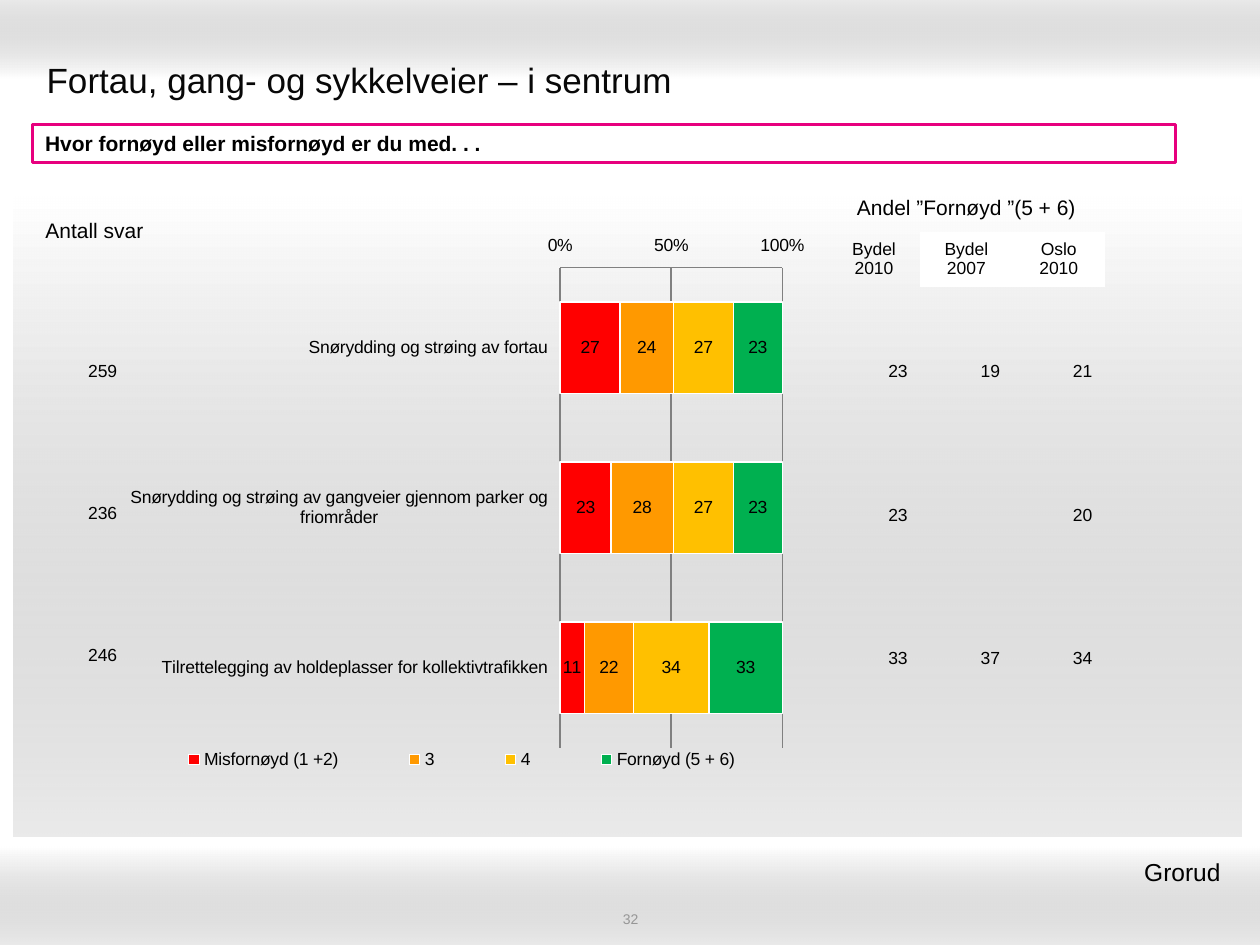
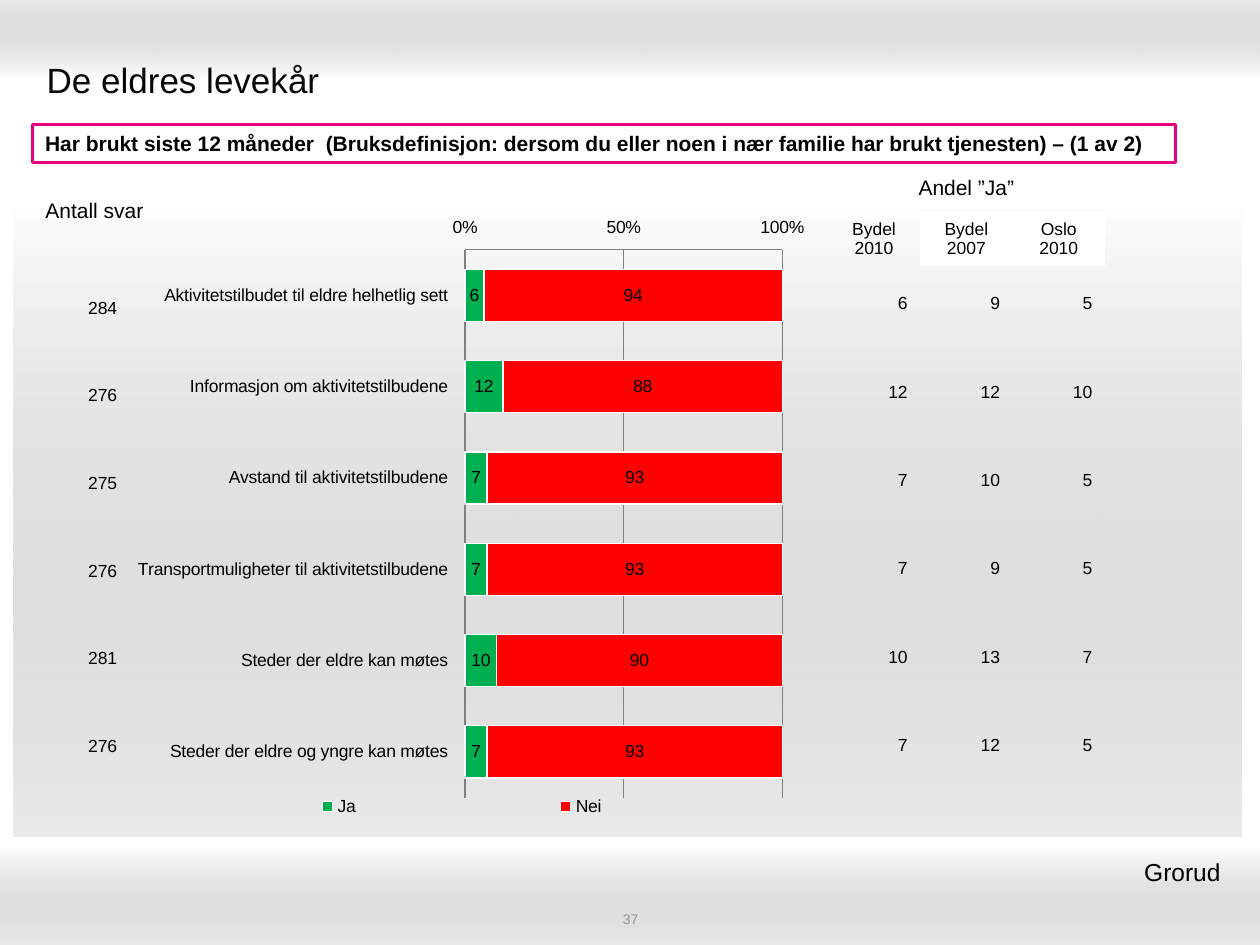
import dataclasses
import typing

import pptx
import pptx.chart.data
import pptx.dml.color
import pptx.enum.chart
import pptx.enum.shapes
import pptx.enum.text
import pptx.oxml
import pptx.oxml.ns
import pptx.util

FONT = "Arial"
INK, WHITE, GREY, PINK, RULE = "000000", "FFFFFF", "999999", "E7007E", "808080"
RED, ORANGE, YELLOW, GREEN = "FF0000", "FF9900", "FFC000", "00B050"
PLAIN_STYLE = "{2D5ABB26-0587-4C30-8999-92F81FD0307C}"
WIDE, HIGH = pptx.util.Inches(10), pptx.util.Inches(7.5)

Align = pptx.enum.text.PP_ALIGN
Anchor = pptx.enum.text.MSO_ANCHOR
Rows = list[list[str]]
qn = pptx.oxml.ns.qn


@dataclasses.dataclass
class Box:
    """A place in percent of the slide's width and height."""
    left: float
    top: float
    width: float
    height: float

    def place(self) -> tuple[int, int, int, int]:
        return (int(WIDE * self.left / 100), int(HIGH * self.top / 100),
                int(WIDE * self.width / 100), int(HIGH * self.height / 100))


@dataclasses.dataclass
class Band:
    box: Box
    angle: int


@dataclasses.dataclass
class Series:
    name: str
    color: str
    values: list[int]


@dataclasses.dataclass
class Page:
    title: str
    ask: str
    number: str
    head: str
    top: float             # top of the column heads
    chart_height: float
    plot: Box              # percent of the chart's frame
    share_top: float
    share_height: float
    count_top: float
    count_height: float
    names: list[str]
    series: list[Series]
    counts: list[str]
    shares: Rows


BANDS = [
    Band(Box(0, 0, 100, 8.27), 90),
    Band(Box(0, 89.6, 100, 10.4), 270),
    Band(Box(1.1, 20.8, 97.4, 67.73), 270),
]
TITLE = Box(2.7, 4.8, 94.5, 7.33)
ASK = Box(2.6, 13.2, 90.7, 4)
NUMBER = Box(34.2, 96.27, 31.7, 1.87)
PLACE = Box(61, 90, 37.4, 4.53)
LEGEND = Box(0, 90.4, 97.5, 6)
HEADS = ["Bydel\n2010", "Bydel\n2007", "Oslo\n2010"]

PAGES = [
    Page("Fortau, gang- og sykkelveier – i sentrum",
         "Hvor fornøyd eller misfornøyd er du med. . .",
         "32", "Andel ”Fornøyd ”(5 + 6)",
         19.6, 60.53, Box(62.9, 7.4, 32, 83.9), 31.73, 45.6, 31.87, 44.93,
         ["Snørydding og strøing av fortau",
          "Snørydding og strøing av gangveier gjennom parker og friområder",
          "Tilrettelegging av holdeplasser for kollektivtrafikken"],
         [Series("Misfornøyd (1 +2)", RED, [27, 23, 11]),
          Series("3", ORANGE, [24, 28, 22]),
          Series("4", YELLOW, [27, 27, 34]),
          Series("Fornøyd (5 + 6)", GREEN, [23, 23, 33])],
         ["259", "236", "246"],
         [["23", "19", "21"], ["23", "", "20"], ["33", "37", "34"]]),
    Page("De eldres levekår",
         "Har brukt siste 12 måneder  (Bruksdefinisjon: dersom du eller noen "
         "i nær familie har brukt tjenesten) – (1 av 2)",
         "37", "Andel ”Ja”",
         17.47, 68.13, Box(49.2, 6.9, 45.7, 85.1), 27.47, 56.13, 28, 55.6,
         ["Aktivitetstilbudet til eldre helhetlig sett ",
          "Informasjon om aktivitetstilbudene ",
          "Avstand til aktivitetstilbudene ",
          "Transportmuligheter til aktivitetstilbudene ",
          "Steder der eldre kan møtes ",
          "Steder der eldre og yngre kan møtes "],
         [Series("Ja", GREEN, [6, 12, 7, 7, 10, 7]),
          Series("Nei", RED, [94, 88, 93, 93, 90, 93])],
         ["284", "276", "275", "276", "281", "276"],
         [["6", "9", "5"], ["12", "12", "10"], ["7", "10", "5"],
          ["7", "9", "5"], ["10", "13", "7"], ["7", "12", "5"]]),
]


def rgb(code: str) -> pptx.dml.color.RGBColor:
    return pptx.dml.color.RGBColor.from_string(code)


def style(font: typing.Any, size: float, color: str = INK, bold: bool = False) -> None:
    font.name, font.size, font.bold = FONT, pptx.util.Pt(size), bold
    font.color.rgb = rgb(color)


def write(frame: typing.Any, text: str, size: float, align: Align = Align.LEFT,
          color: str = INK, bold: bool = False) -> None:
    frame.text = text
    for line in frame.paragraphs:
        line.alignment = align
        style(line.font, size, color, bold)


def add_rect(slide: typing.Any, box: Box) -> typing.Any:
    shape = slide.shapes.add_shape(pptx.enum.shapes.MSO_SHAPE.RECTANGLE, *box.place())
    shape.shadow.inherit = False
    return shape


def add_band(slide: typing.Any, band: Band) -> None:
    """Fade from white to a grey that is mostly clear."""
    shape = add_rect(slide, band.box)
    shape.line.fill.background()
    shape.fill.gradient()
    shape.fill.gradient_angle = band.angle
    for stop, color, spot in zip(shape.fill.gradient_stops, (WHITE, GREY), (0, 1)):
        stop.color.rgb = rgb(color)
        stop.position = spot
    for tint in shape.element.iter(qn("a:srgbClr")):
        if tint.get("val") == GREY:
            alpha = tint.makeelement(qn("a:alpha"), {"val": "20000"})
            tint.append(alpha)


def add_title(slide: typing.Any, text: str) -> None:
    title = slide.shapes.title
    title.left, title.top, title.width, title.height = TITLE.place()
    frame = title.text_frame
    frame.auto_size = pptx.enum.text.MSO_AUTO_SIZE.NONE
    frame.vertical_anchor = Anchor.MIDDLE
    write(frame, text, 20, color="080808")
    slide.shapes.element.append(title.element)  # in front of the bands


def add_ask(slide: typing.Any, text: str) -> None:
    shape = add_rect(slide, ASK)
    shape.fill.solid()
    shape.fill.fore_color.rgb = rgb(WHITE)
    shape.line.color.rgb = rgb(PINK)
    shape.line.width = pptx.util.Pt(2)
    shape.text_frame.word_wrap = True
    write(shape.text_frame, text, 12, bold=True)


def add_text(slide: typing.Any, box: Box, text: str, size: float, align: Align,
             color: str = INK) -> typing.Any:
    frame = slide.shapes.add_textbox(*box.place()).text_frame
    frame.word_wrap = True
    write(frame, text, size, align, color)
    return frame


def add_grid(slide: typing.Any, box: Box, rows: Rows, size: float,
             align: Align) -> typing.Any:
    """Add a clear table with equal rows and columns."""
    frame = slide.shapes.add_table(len(rows), len(rows[0]), *box.place())
    for tag in frame.element.iter(qn("a:tableStyleId")):
        tag.text = PLAIN_STYLE
    table = frame.table
    table.first_row = table.horz_banding = False
    for r, row in enumerate(rows):
        for c, text in enumerate(row):
            cell = table.cell(r, c)
            cell.fill.background()
            cell.vertical_anchor = Anchor.MIDDLE
            write(cell.text_frame, text, size, align)
    return table


def add_heads(slide: typing.Any, page: Page) -> None:
    table = add_grid(slide, Box(65.7, page.top, 22, 10.67),
                     [[page.head, "", ""], HEADS], 10, Align.CENTER)
    for row, part in zip(table.rows, (0.37, 0.43)):
        row.height = pptx.util.Inches(part)
    table.cell(0, 0).merge(table.cell(0, 2))
    write(table.cell(0, 0).text_frame, page.head, 12, Align.CENTER)
    for c in (1, 2):
        fill = table.cell(1, c).fill
        fill.solid()
        fill.fore_color.rgb = rgb(WHITE)


def set_layout(part: typing.Any, box: Box, spot: int, target: str = "") -> None:
    """Fix the place of a chart part, in percent of the chart."""
    for old in part.findall(qn("c:layout")):
        part.remove(old)
    sides = zip("xywh", (box.left, box.top, box.width, box.height))
    lengths = "".join(f'<c:{k} val="{v / 100:.3f}"/>' for k, v in sides)
    part.insert(spot, pptx.oxml.parse_xml(
        f'<c:layout {pptx.oxml.ns.nsdecls("c")}><c:manualLayout>{target}'
        f'<c:xMode val="edge"/><c:yMode val="edge"/>{lengths}'
        '</c:manualLayout></c:layout>'))


def clear_fill() -> typing.Any:
    return pptx.oxml.parse_xml(
        f'<c:spPr {pptx.oxml.ns.nsdecls("c", "a")}><a:noFill/>'
        '<a:ln><a:noFill/></a:ln></c:spPr>')


def add_bars(slide: typing.Any, page: Page) -> None:
    kinds = pptx.enum.chart
    data = pptx.chart.data.CategoryChartData()
    data.categories = page.names
    for item in page.series:
        data.add_series(item.name, item.values)
    box = Box(9.8, page.top + 4.27, 55.1, page.chart_height)
    chart = slide.shapes.add_chart(
        kinds.XL_CHART_TYPE.BAR_STACKED, *box.place(), data).chart
    chart.has_title = False
    style(chart.font, 10)

    plot = chart.plots[0]
    plot.gap_width, plot.overlap, plot.vary_by_categories = 75, 100, False
    for series, item in zip(plot.series, page.series):
        series.format.fill.solid()
        series.format.fill.fore_color.rgb = rgb(item.color)
        series.format.line.color.rgb = rgb(WHITE)
        series.format.line.width = pptx.util.Pt(0.75)
        labels = series.data_labels
        labels.show_value = True
        labels.number_format, labels.number_format_is_linked = "0", False

    names, scale = chart.category_axis, chart.value_axis
    names.reverse_order = True
    names.major_tick_mark = kinds.XL_TICK_MARK.NONE
    scale.major_tick_mark = kinds.XL_TICK_MARK.INSIDE
    scale.minimum_scale, scale.maximum_scale, scale.major_unit = 0, 100, 50
    scale.has_major_gridlines = True
    scale.tick_labels.number_format = r"General\%"
    scale.tick_labels.number_format_is_linked = False
    for axis in (names, scale):
        axis.tick_label_position = kinds.XL_TICK_LABEL_POSITION.LOW
    for part in (names, scale, scale.major_gridlines):
        part.format.line.color.rgb = rgb(RULE)
        part.format.line.width = pptx.util.Pt(0.75)

    chart.has_legend = True
    chart.legend.position = kinds.XL_LEGEND_POSITION.BOTTOM
    chart.legend.include_in_layout = False
    root = chart.element.find(qn("c:chart"))
    area = root.find(qn("c:plotArea"))
    set_layout(area, page.plot, 0, '<c:layoutTarget val="inner"/>')
    set_layout(root.find(qn("c:legend")), LEGEND, 1)
    area.append(clear_fill())
    root.addnext(clear_fill())


def add_page(deck: typing.Any, page: Page) -> None:
    slide = deck.slides.add_slide(deck.slide_layouts.get_by_name("Title Only"))
    for band in BANDS:
        add_band(slide, band)
    add_title(slide, page.title)
    foot = add_text(slide, NUMBER, page.number, 8, Align.CENTER, "969696")
    foot.margin_top = foot.margin_bottom = 0
    foot.vertical_anchor = Anchor.MIDDLE
    add_ask(slide, page.ask)
    add_bars(slide, page)
    add_grid(slide, Box(65.7, page.share_top, 22, page.share_height),
             page.shares, 10, Align.RIGHT)
    add_heads(slide, page)
    add_grid(slide, Box(5.1, page.count_top, 5.2, page.count_height),
             [[count] for count in page.counts], 10, Align.RIGHT)
    add_grid(slide, Box(0.4, page.top + 0.93, 14.2, 7.87),
             [["Antall svar"]], 12, Align.CENTER)
    add_text(slide, PLACE, "Grorud ", 14, Align.RIGHT)


def main() -> None:
    deck = pptx.Presentation()
    deck.slide_width, deck.slide_height = WIDE, HIGH
    for page in PAGES:
        add_page(deck, page)
    deck.save("out.pptx")


if __name__ == "__main__":
    main()
